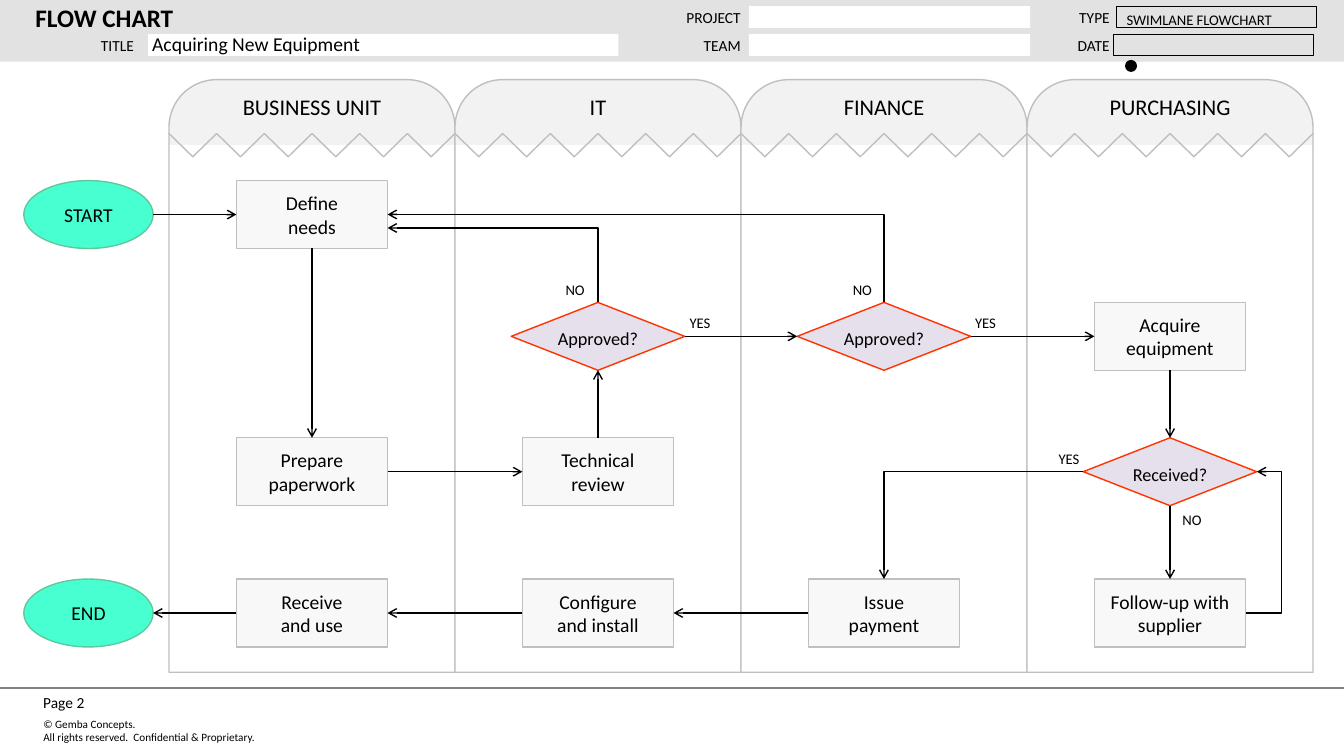
from lxml.etree import SubElement
from pptx import Presentation
from pptx.dml.color import RGBColor
from pptx.enum.shapes import MSO_CONNECTOR as Link, MSO_SHAPE as Preset
from pptx.enum.text import MSO_ANCHOR as Anchor, PP_ALIGN as Align
from pptx.oxml.ns import qn
from pptx.util import Pt

BLACK = RGBColor(0x00, 0x00, 0x00)
WHITE = RGBColor(0xFF, 0xFF, 0xFF)
GREY = RGBColor(0x80, 0x80, 0x80)
BAND = RGBColor(0xE2, 0xE2, 0xE2)
LANE_HEAD = RGBColor(0xF2, 0xF2, 0xF2)
BORDER = RGBColor(0xBF, 0xBF, 0xBF)
STEP_FILL = RGBColor(0xF8, 0xF8, 0xF8)
CHOICE_FILL = RGBColor(0xE6, 0xE0, 0xEC)
CHOICE_LINE = RGBColor(0xFF, 0x33, 0x00)
END_FILL = RGBColor(0x47, 0xFF, 0xD1)
END_LINE = RGBColor(0x60, 0xC9, 0x9C)
TOOTH_FILL = RGBColor(0x99, 0xCC, 0xFF)

LANES = ["BUSINESS UNIT", "IT", "FINANCE", "PURCHASING"]

# key: (kind, column, row, text); column -1 lies left of the lanes
NODES = {
    "start": ("end", -1, 0, "START"),
    "define": ("step", 0, 0, "Define\nneeds"),
    "prepare": ("step", 0, 2, "Prepare\npaperwork"),
    "review": ("step", 1, 2, "Technical\nreview"),
    "it ok": ("choice", 1, 1, "Approved?"),
    "finance ok": ("choice", 2, 1, "Approved?"),
    "acquire": ("step", 3, 1, "Acquire\nequipment"),
    "received": ("choice", 3, 2, "Received?"),
    "follow up": ("step", 3, 3, "Follow-up with supplier"),
    "pay": ("step", 2, 3, "Issue\npayment"),
    "configure": ("step", 1, 3, "Configure\nand install"),
    "use": ("step", 0, 3, "Receive\nand use"),
    "end": ("end", -1, 3, "END"),
}
KINDS = {  # preset, width, fill, line, text size, margins
    "step": (Preset.RECTANGLE, 108, STEP_FILL, BORDER, 14, (7.2, 3.6, 7.2, 3.6)),
    "choice": (Preset.DIAMOND, 124, CHOICE_FILL, CHOICE_LINE, 13, (0, 2.9, 0, 0)),
    "end": (Preset.OVAL, 92.4, END_FILL, END_LINE, 14, (7.2, 3.6, 7.2, 3.6)),
}
TOP, LEFT, BOTTOM, RIGHT = range(4)
ARROWS = [
    ("start", RIGHT, "define", LEFT), ("define", BOTTOM, "prepare", TOP),
    ("prepare", RIGHT, "review", LEFT), ("review", TOP, "it ok", BOTTOM),
    ("it ok", RIGHT, "finance ok", LEFT), ("finance ok", RIGHT, "acquire", LEFT),
    ("acquire", BOTTOM, "received", TOP), ("received", BOTTOM, "follow up", TOP),
    ("pay", LEFT, "configure", RIGHT), ("configure", LEFT, "use", RIGHT),
    ("use", LEFT, "end", RIGHT),
]
ANSWERS = [  # text, centre x, centre y
    ("NO", 410.8, 206.6), ("NO", 616, 206.6), ("YES", 500, 230.8),
    ("YES", 703.9, 230.8), ("YES", 763.6, 327.6), ("NO", 851.5, 371.2),
]
CAPTIONS = [  # text, left, top, width, height, alignment, size, bold
    ("DATE", 737.3, 24, 58.3, 16.6, Align.RIGHT, 11, False),
    ("TEAM", 450, 24, 82, 16.6, Align.RIGHT, 11, False),
    ("TYPE", 737.3, 3.8, 58.3, 16.6, Align.RIGHT, 11, False),
    ("PROJECT", 450, 3.8, 82, 16.6, Align.RIGHT, 11, False),
    ("FLOW CHART", 22.3, 0, 417, 24.5, Align.LEFT, 18, True),
    ("TITLE", 10.8, 24, 87.8, 16.6, Align.RIGHT, 11, False),
]
FOOTER = [  # text, left, top, width, height, size
    ("© Gemba Concepts.\nAll rights reserved.  Confidential & Proprietary.",
     26.6, 508, 310.3, 28, 8),
    ("Page 2", 26.6, 491, 67.7, 21.6, 11),
]

LANE_LEFT, LANE_TOP, LANE_WIDTH, LANE_HEIGHT = 120.7, 56.9, 204.3, 423.3
TEETH = 6
TOOTH_HEIGHT, TOOTH_MIDDLE = 16.6, 103.7
ROW_TOPS = [129, 216, 312.7, 413.6]
NODE_HEIGHT = 48.5
END_CENTRE = 63.2
ANSWER_WIDTH, ANSWER_HEIGHT = 36, 19.4

deck = Presentation()
deck.slide_width, deck.slide_height = Pt(960), Pt(540)
page = deck.slides.add_slide(deck.slide_layouts[6])


def write(shape, text, size=11, align=Align.LEFT, anchor=Anchor.MIDDLE,
          margins=(2.9, 2.9, 2.9, 2.9), bold=False, spacing=None, wrap=True):
    frame = shape.text_frame
    frame.word_wrap, frame.vertical_anchor = wrap, anchor
    (frame.margin_left, frame.margin_top,
     frame.margin_right, frame.margin_bottom) = map(Pt, margins)
    for index, line in enumerate(text.split("\n")):
        para = frame.add_paragraph() if index else frame.paragraphs[0]
        para.alignment, para.line_spacing = align, spacing
        span = para.add_run()
        span.text = line
        span.font.name, span.font.size, span.font.bold = "Calibri", Pt(size), bold
        span.font.color.rgb = BLACK


def draw(preset, left, top, width, height, fill=None, line=None, weight=1):
    shape = page.shapes.add_shape(preset, Pt(left), Pt(top), Pt(width), Pt(height))
    shape.shadow.inherit = False
    if fill is None:
        shape.fill.background()
    else:
        shape.fill.solid()
        shape.fill.fore_color.rgb = fill
    if line is None:
        shape.line.fill.background()
    else:
        shape.line.color.rgb, shape.line.width = line, Pt(weight)
    return shape


def text_box(text, left, top, width, height, **style):
    box = page.shapes.add_textbox(Pt(left), Pt(top), Pt(width), Pt(height))
    write(box, text, **style)


def connect(start, end, kind=Link.STRAIGHT, color=BLACK, weight=1, arrow=True):
    link = page.shapes.add_connector(kind, *map(Pt, (*start, *end)))
    link.line.color.rgb, link.line.width = color, Pt(weight)
    if arrow:
        SubElement(link.line._get_or_add_ln(), qn("a:tailEnd"), type="arrow")
    SubElement(link._element.spPr, qn("a:effectLst"))
    return link


def bend(start, end, up_first=False):
    """Arrow with one corner; up_first runs up and then left."""
    link = connect(start, end, Link.ELBOW)
    link._element.spPr.find(qn("a:prstGeom")).set("prst", "bentConnector2")
    if up_first:
        across, rise = start[0] - end[0], start[1] - end[1]
        link.left = Pt((start[0] + end[0] - rise) / 2)
        link.top = Pt((start[1] + end[1] - across) / 2)
        link.width, link.height = Pt(rise), Pt(across)
        frame = link._element.spPr.find(qn("a:xfrm"))
        frame.attrib.pop("flipH", None)
        frame.set("flipV", "1")
        frame.set("rot", "16200000")


def fade(shape, stops):
    """Gradient running from the bottom to the top."""
    shape.fill.gradient()
    shape.fill.gradient_angle = 90
    stop_list = shape._element.spPr.find(qn("a:gradFill")).find(qn("a:gsLst"))
    for old in list(stop_list):
        stop_list.remove(old)
    for percent, color in stops:
        stop = SubElement(stop_list, qn("a:gs"), pos=str(percent * 1000))
        SubElement(stop, qn("a:srgbClr"), val=str(color))


def side(key, which):
    kind, column, row, _ = NODES[key]
    width, middle = KINDS[kind][1], ROW_TOPS[row] + NODE_HEIGHT / 2
    x = END_CENTRE if column < 0 else LANE_LEFT + (column + 0.5) * LANE_WIDTH
    dx, dy = ((0, -1), (-1, 0), (0, 1), (1, 0))[which]
    return x + dx * width / 2, middle + dy * NODE_HEIGHT / 2


# Footer and header
connect((0, 491.2), (960, 491.2), color=GREY, weight=1.5, arrow=False)
for text, *place, size in FOOTER:
    text_box(text, *place, size=size, anchor=Anchor.TOP, margins=(4.3,) * 4)
draw(Preset.RECTANGLE, 0, 0, 960, 44, BAND)
for text, *place, align, size, bold in CAPTIONS:
    text_box(text, *place, align=align, size=size, bold=bold)
title = draw(Preset.RECTANGLE, 105.8, 24.4, 336, 15.6, WHITE)
write(title, "Acquiring New Equipment", size=14, spacing=0.9)
for top in (24.4, 4.4):
    draw(Preset.RECTANGLE, 535, top, 200.8, 15.6, WHITE)
draw(Preset.RECTANGLE, 795.6, 24.4, 142.6, 15.6, line=BLACK, weight=0.75)
chart_type = draw(Preset.RECTANGLE, 797.6, 4.4, 142.6, 15.6, line=BLACK, weight=0.75)
write(chart_type, "SWIMLANE FLOWCHART", size=10.5, anchor=Anchor.TOP,
      margins=(7.2, 3.6, 7.2, 3.6))
draw(Preset.OVAL, 803.6, 42.8, 8.6, 8.6, BLACK)

# Lanes with their toothed edge
for index, name in enumerate(LANES):
    lane = draw(Preset.ROUND_2_SAME_RECTANGLE, LANE_LEFT + index * LANE_WIDTH,
                LANE_TOP, LANE_WIDTH, LANE_HEIGHT, line=BORDER)
    fade(lane, [(0, WHITE), (89, WHITE), (89, LANE_HEAD), (100, LANE_HEAD)])
    write(lane, name, size=16, align=Align.CENTER, anchor=Anchor.TOP,
          margins=(2.9, 0, 2.9, 0))
pitch = LANE_WIDTH / TEETH
for index in range(TEETH * len(LANES)):
    tooth = draw(Preset.CHEVRON, LANE_LEFT + (index + 0.5) * pitch - TOOTH_HEIGHT / 2,
                 TOOTH_MIDDLE - pitch / 2, TOOTH_HEIGHT, pitch, TOOTH_FILL, BORDER)
    tooth.adjustments[0] = 1
    tooth.rotation = 90

# Flow
nodes = {}
for key, (kind, column, row, text) in NODES.items():
    preset, width, fill, line, size, margins = KINDS[kind]
    nodes[key] = draw(preset, side(key, LEFT)[0], ROW_TOPS[row], width,
                      NODE_HEIGHT, fill, line)
    write(nodes[key], text, size=size, align=Align.CENTER, margins=margins)
for source, out, target, into in ARROWS:
    link = connect(side(source, out), side(target, into))
    if NODES[source][0] != "end":
        link.begin_connect(nodes[source], out)
    if NODES[target][0] != "end":
        link.end_connect(nodes[target], into)
for text, x, y in ANSWERS:
    text_box(text, x - ANSWER_WIDTH / 2, y - ANSWER_HEIGHT / 2, ANSWER_WIDTH,
             ANSWER_HEIGHT, size=10.5, align=Align.CENTER,
             margins=(0, 3.6, 0, 3.6), wrap=False)

define_right, define_middle = side("define", RIGHT)
bend(side("finance ok", TOP), (define_right, define_middle), up_first=True)
bend(side("it ok", TOP), (define_right, define_middle + 9.6), up_first=True)
bend(side("received", LEFT), side("pay", TOP))
retry = connect(side("follow up", RIGHT), side("received", RIGHT), Link.ELBOW)
guides = retry._element.spPr.find(qn("a:prstGeom")).find(qn("a:avLst"))
SubElement(guides, qn("a:gd"), name="adj1", fmla="val 320000")

deck.save("out.pptx")
